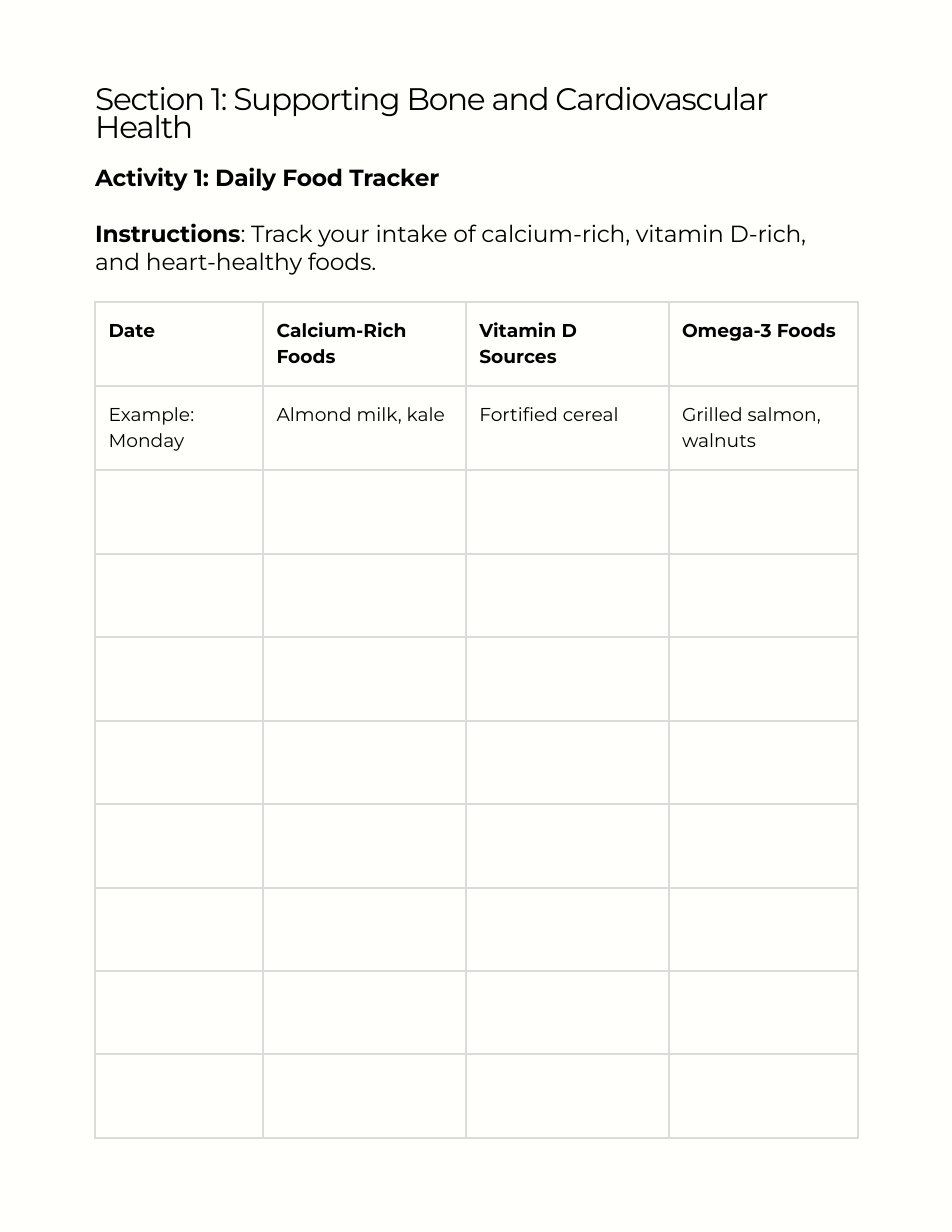
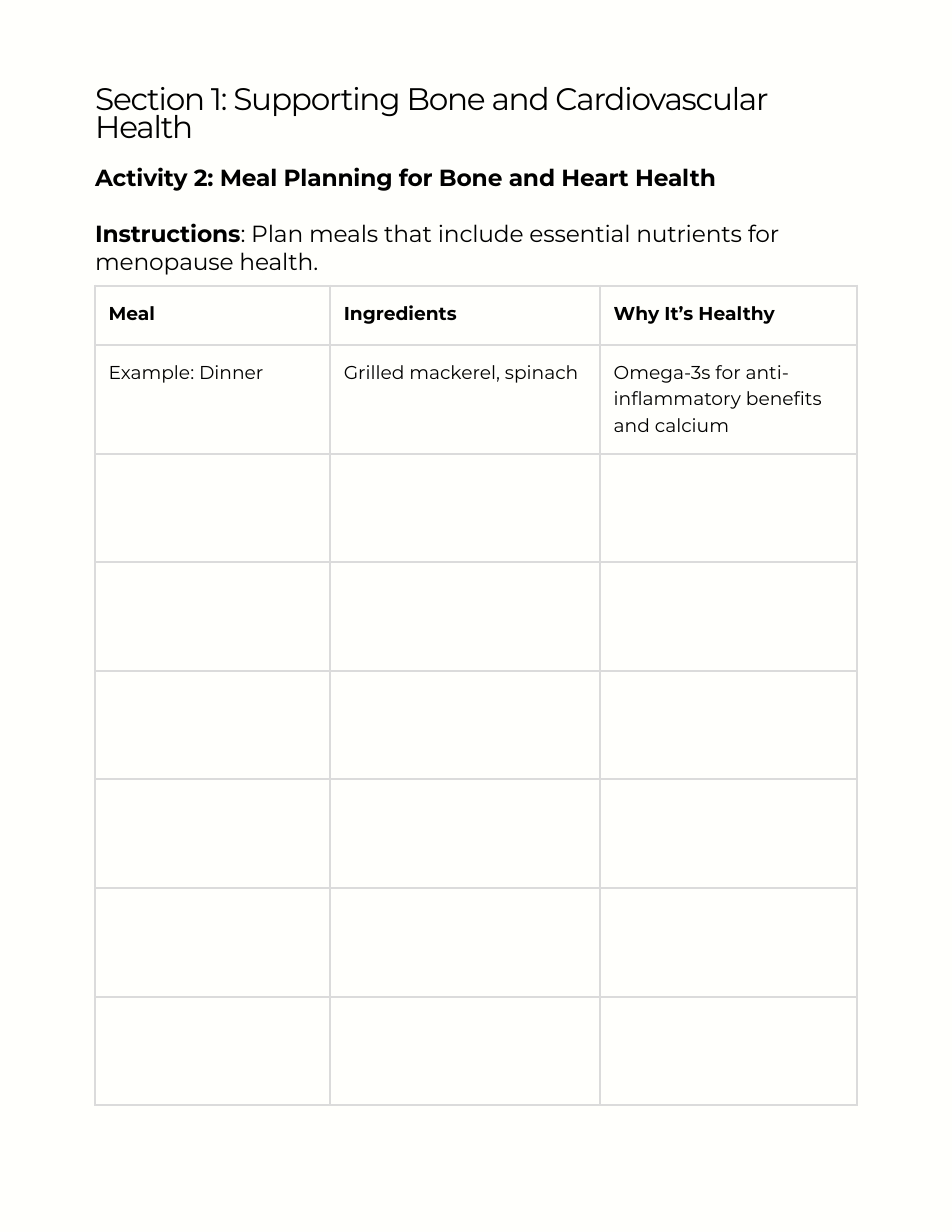
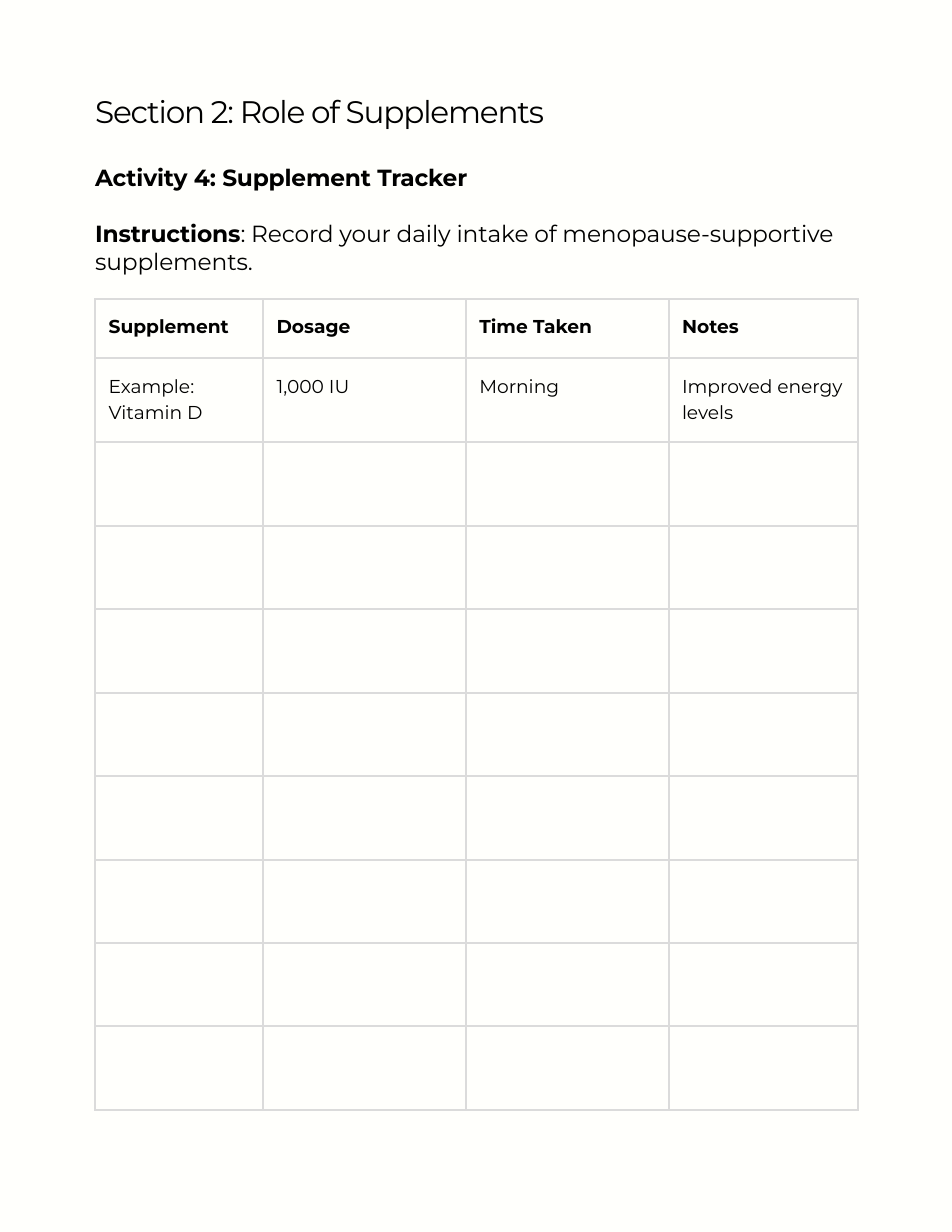
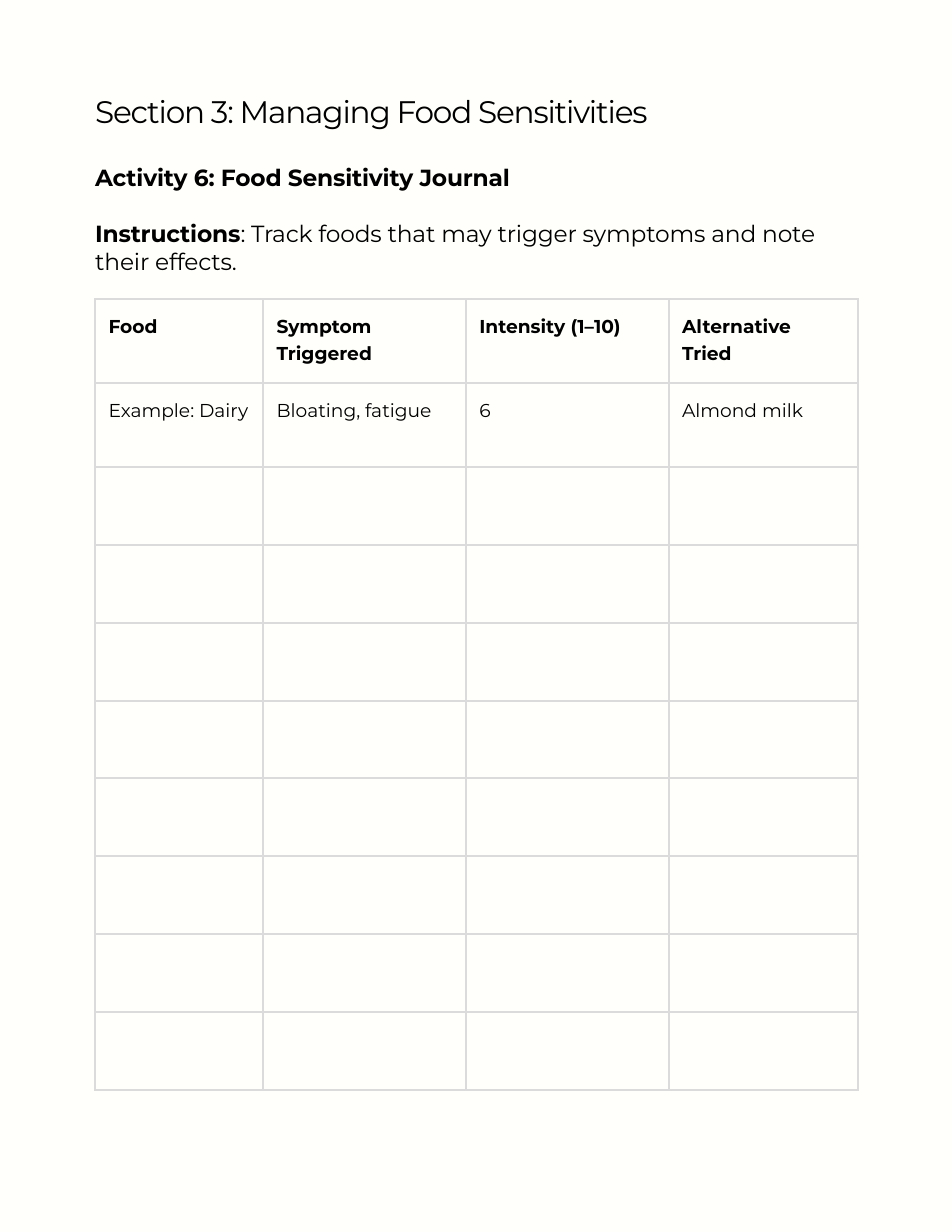
from lxml import etree
from pptx import Presentation
from pptx.dml.color import RGBColor
from pptx.enum.text import MSO_AUTO_SIZE
from pptx.oxml.ns import qn
from pptx.util import Inches, Pt

FIT_TEXT = MSO_AUTO_SIZE.SHAPE_TO_FIT_TEXT

PAPER = RGBColor(0xFF, 0xFF, 0xFC)
INK = RGBColor(0x00, 0x00, 0x00)
GRID = RGBColor(0xDB, 0xDB, 0xDB)

FONT = "Montserrat"
LEFT = 0.85
WIDTH = 6.8
CELL_INSET = 0.12
FOUR_COLUMNS = [1.5, 1.81, 1.81, 1.69]
THREE_COLUMNS = [2.1, 2.41, 2.29]

BONE_AND_HEART = "Section 1: Supporting Bone and Cardiovascular Health"

WORKSHEETS = [
    dict(
        section=BONE_AND_HEART, section_top=0.79, section_height=0.51,
        activity="Activity 1: Daily Food Tracker",
        instructions="Track your intake of calcium-rich, vitamin D-rich, and heart-healthy foods.",
        header=["Date", "Calcium-Rich Foods", "Vitamin D Sources", "Omega-3 Foods"],
        example=["Example: Monday", "Almond milk, kale", "Fortified cereal",
                 "Grilled salmon, walnuts"],
        top=2.7, columns=FOUR_COLUMNS, rows=[0.75, 0.75] + [0.745] * 8,
    ),
    dict(
        section=BONE_AND_HEART, section_top=0.79, section_height=0.51,
        activity="Activity 2: Meal Planning for Bone and Heart Health",
        instructions="Plan meals that include essential nutrients for menopause health.",
        header=["Meal", "Ingredients", "Why It’s Healthy"],
        example=["Example: Dinner", "Grilled mackerel, spinach",
                 "Omega-3s for anti-inflammatory benefits and calcium"],
        top=2.55, columns=THREE_COLUMNS, rows=[0.53] + [0.97] * 7,
    ),
    dict(
        section="Section 2: Role of Supplements", section_top=0.91, section_height=0.27,
        activity="Activity 4: Supplement Tracker",
        instructions="Record your daily intake of menopause-supportive supplements.",
        header=["Supplement", "Dosage", "Time Taken", "Notes"],
        example=["Example: Vitamin D", "1,000 IU", "Morning", "Improved energy levels"],
        top=2.67, columns=FOUR_COLUMNS, rows=[0.53, 0.75] + [0.745] * 8,
    ),
    dict(
        section="Section 3: Managing Food Sensitivities", section_top=0.91, section_height=0.27,
        activity="Activity 6: Food Sensitivity Journal",
        instructions="Track foods that may trigger symptoms and note their effects.",
        header=["Food", "Symptom Triggered", "Intensity (1–10)", "Alternative Tried"],
        example=["Example: Dairy", "Bloating, fatigue", "6", "Almond milk"],
        top=2.67, columns=FOUR_COLUMNS, rows=[0.75, 0.75] + [0.695] * 8,
    ),
]


def style_paragraph(p, size, line_spacing):
    p.line_spacing = Pt(line_spacing)
    p.font.name = FONT
    p.font.size = Pt(size)
    p.font.color.rgb = INK


def add_run(p, text, bold=False, tracking=0):
    r = p.add_run()
    r.text = text
    r.font.bold = bold
    if tracking:
        r._r.get_or_add_rPr().set("spc", str(round(tracking * 100)))


def add_text_frame(s, top, height):
    sp = s.shapes.add_textbox(Inches(LEFT), Inches(top), Inches(WIDTH), Inches(height))
    tf = sp.text_frame
    tf.margin_left = tf.margin_top = tf.margin_right = tf.margin_bottom = 0
    tf.word_wrap = True
    tf.auto_size = FIT_TEXT
    return tf


def add_section_title(s, text, top, height):
    p = add_text_frame(s, top, height).paragraphs[0]
    style_paragraph(p, 20, 18)
    add_run(p, text, tracking=-0.8)


def add_activity(s, activity, instructions):
    tf = add_text_frame(s, 1.46, 0.93)
    p = tf.paragraphs[0]
    style_paragraph(p, 15, 18)
    add_run(p, activity, bold=True, tracking=-0.1)
    p = tf.add_paragraph()
    style_paragraph(p, 15, 18)
    p.space_before = Pt(18)
    add_run(p, "Instructions", bold=True, tracking=-0.1)
    add_run(p, ": " + instructions, tracking=-0.1)


def set_borders(cell):
    tc_pr = cell._tc.get_or_add_tcPr()
    for side in ("a:lnL", "a:lnR", "a:lnT", "a:lnB"):
        ln = etree.SubElement(tc_pr, qn(side), w=str(Pt(1.5)))
        fill = etree.SubElement(ln, qn("a:solidFill"))
        etree.SubElement(fill, qn("a:srgbClr"), val=str(GRID))


def add_log_table(s, top, columns, rows, header, example):
    frame = s.shapes.add_table(len(rows), len(columns), Inches(LEFT), Inches(top),
                               Inches(WIDTH), Inches(sum(rows)))
    table = frame.table
    table.horz_banding = False
    for column, width in zip(table.columns, columns):
        column.width = Inches(width)
    for row, height in zip(table.rows, rows):
        row.height = Inches(height)
    for cell in table.iter_cells():
        set_borders(cell)
        cell.fill.background()
        cell.margin_left = cell.margin_right = Inches(CELL_INSET)
        cell.margin_top = cell.margin_bottom = Inches(CELL_INSET)
    for i, texts in enumerate((header, example)):
        for j, text in enumerate(texts):
            p = table.cell(i, j).text_frame.paragraphs[0]
            style_paragraph(p, 12, 16.8)
            add_run(p, text, bold=i == 0)


def add_worksheet(prs, sheet):
    s = prs.slides.add_slide(prs.slide_layouts[6])
    add_section_title(s, sheet["section"], sheet["section_top"], sheet["section_height"])
    add_activity(s, sheet["activity"], sheet["instructions"])
    add_log_table(s, sheet["top"], sheet["columns"], sheet["rows"],
                  sheet["header"], sheet["example"])


def main():
    prs = Presentation()
    prs.slide_width = Inches(8.5)
    prs.slide_height = Inches(11)
    background = prs.slide_master.background.fill
    background.solid()
    background.fore_color.rgb = PAPER
    for sheet in WORKSHEETS:
        add_worksheet(prs, sheet)
    prs.save("out.pptx")


if __name__ == "__main__":
    main()
